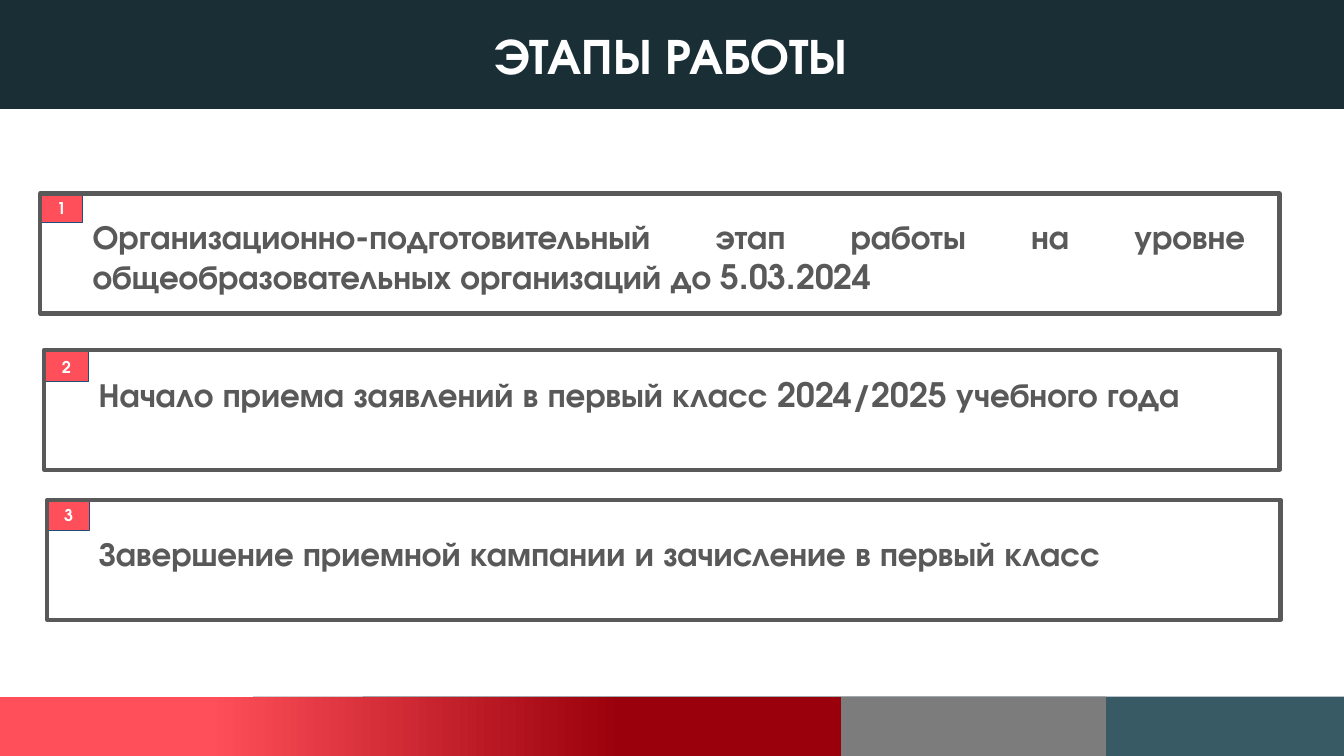
from copy import deepcopy
from dataclasses import dataclass

from pptx import Presentation
from pptx import util as u
from pptx.dml.color import RGBColor
from pptx.enum import shapes, text


@dataclass(frozen=True)
class Theme:
    font: str = "TeX Gyre Adventor"
    dark: RGBColor = RGBColor(0x1A, 0x2E, 0x35)
    teal: RGBColor = RGBColor(0x38, 0x5A, 0x64)
    gray: RGBColor = RGBColor(0x7C, 0x7C, 0x7C)
    ink: RGBColor = RGBColor(0x59, 0x59, 0x59)
    white: RGBColor = RGBColor(0xFF, 0xFF, 0xFF)
    coral: RGBColor = RGBColor(0xFF, 0x4F, 0x5A)
    crimson: RGBColor = RGBColor(0x9A, 0x00, 0x0B)
    badge_line: RGBColor = RGBColor(0x1F, 0x4E, 0x79)
    title_size: float = 36
    body_size: float = 24
    badge_size: float = 11.6


@dataclass(frozen=True)
class Box:
    left: float
    top: float
    width: float
    height: float

    def lengths(self) -> tuple:
        return tuple(u.Inches(v) for v in (self.left, self.top, self.width, self.height))


@dataclass(frozen=True)
class Stage:
    number: str
    wording: str
    frame: Box
    badge: Box
    label: Box


@dataclass(frozen=True)
class Stripe:
    box: Box
    color: RGBColor


THEME = Theme()
FRAME_HEIGHT, BADGE_HEIGHT = 1.19, 0.3
FOOTER_TOP, FOOTER_HEIGHT = 6.91, 0.59

STAGES = (
    Stage("1", "Организационно-подготовительный этап работы на уровне "
          "общеобразовательных организаций до 5.03.2024",
          Box(0.4, 1.92, 12.29, FRAME_HEIGHT), Box(0.4, 1.91, 0.42, BADGE_HEIGHT),
          Box(0.82, 2.09, 11.63, 0.91)),
    Stage("2", "Начало приема заявлений в первый класс 2024/2025 учебного года",
          Box(0.44, 3.47, 12.25, FRAME_HEIGHT), Box(0.44, 3.49, 0.44, BADGE_HEIGHT),
          Box(0.88, 3.66, 11.57, 0.91)),
    Stage("3", "Завершение приемной кампании и зачисление в первый класс",
          Box(0.47, 4.96, 12.23, FRAME_HEIGHT), Box(0.47, 4.96, 0.42, BADGE_HEIGHT),
          Box(0.88, 5.24, 11.69, 0.77)),
)

STRIPES = (
    Stripe(Box(3.6, FOOTER_TOP, 9.74, FOOTER_HEIGHT), THEME.teal),
    Stripe(Box(2.51, FOOTER_TOP, 8.46, FOOTER_HEIGHT), THEME.gray),
)
GRADIENT_BOX = Box(-0.02, FOOTER_TOP, 8.36, FOOTER_HEIGHT)
GRADIENT_STOPS = ((0, THEME.coral), (0.25, THEME.coral), (0.74, THEME.crimson))


def add_rectangle(slide, box: Box, fill: RGBColor | None = None,
                  line: RGBColor | None = None, line_width: float = 0):
    shape = slide.shapes.add_shape(shapes.MSO_SHAPE.RECTANGLE, *box.lengths())
    shape.shadow.inherit = False
    if fill is None:
        shape.fill.background()
    else:
        shape.fill.solid()
        shape.fill.fore_color.rgb = fill
    if line is None:
        shape.line.fill.background()
    else:
        shape.line.color.rgb = line
        shape.line.width = u.Pt(line_width)
    return shape


def write(shape, wording: str, size: float, color: RGBColor,
          alignment: text.PP_ALIGN, anchor: text.MSO_ANCHOR) -> None:
    frame = shape.text_frame
    frame.word_wrap = True
    frame.vertical_anchor = anchor
    paragraph = frame.paragraphs[0]
    paragraph.text = wording
    paragraph.alignment = alignment
    font = paragraph.font
    font.name, font.size, font.bold = THEME.font, u.Pt(size), True
    font.color.rgb = color


def add_title(slide) -> None:
    banner = add_rectangle(slide, Box(-0.02, 0, 13.35, 1.08), THEME.dark)
    write(banner, "ЭТАПЫ РАБОТЫ", THEME.title_size, THEME.white,
          text.PP_ALIGN.CENTER, text.MSO_ANCHOR.MIDDLE)


def add_stage(slide, stage: Stage) -> None:
    badge = add_rectangle(slide, stage.badge, THEME.coral, THEME.badge_line, 0.75)
    write(badge, stage.number, THEME.badge_size, THEME.white,
          text.PP_ALIGN.CENTER, text.MSO_ANCHOR.MIDDLE)
    label = slide.shapes.add_textbox(*stage.label.lengths())
    write(label, stage.wording, THEME.body_size, THEME.ink,
          text.PP_ALIGN.JUSTIFY, text.MSO_ANCHOR.TOP)
    add_rectangle(slide, stage.frame, line=THEME.ink, line_width=3)


def add_footer(slide) -> None:
    for stripe in STRIPES:
        add_rectangle(slide, stripe.box, stripe.color)
    band = add_rectangle(slide, GRADIENT_BOX, THEME.coral)
    band.fill.gradient()
    band.fill.gradient_angle = 0
    stop_list = band._element.spPr.gradFill.gsLst
    stop_list.append(deepcopy(stop_list[0]))
    for stop, (position, color) in zip(band.fill.gradient_stops, GRADIENT_STOPS):
        stop.position = position
        stop.color.rgb = color


def main() -> None:
    presentation = Presentation()
    presentation.slide_width = u.Inches(13.33)
    presentation.slide_height = u.Inches(7.5)
    slide = presentation.slides.add_slide(presentation.slide_layouts[6])
    add_title(slide)
    for stage in STAGES:
        add_stage(slide, stage)
    add_footer(slide)
    presentation.save("out.pptx")


if __name__ == "__main__":
    main()
